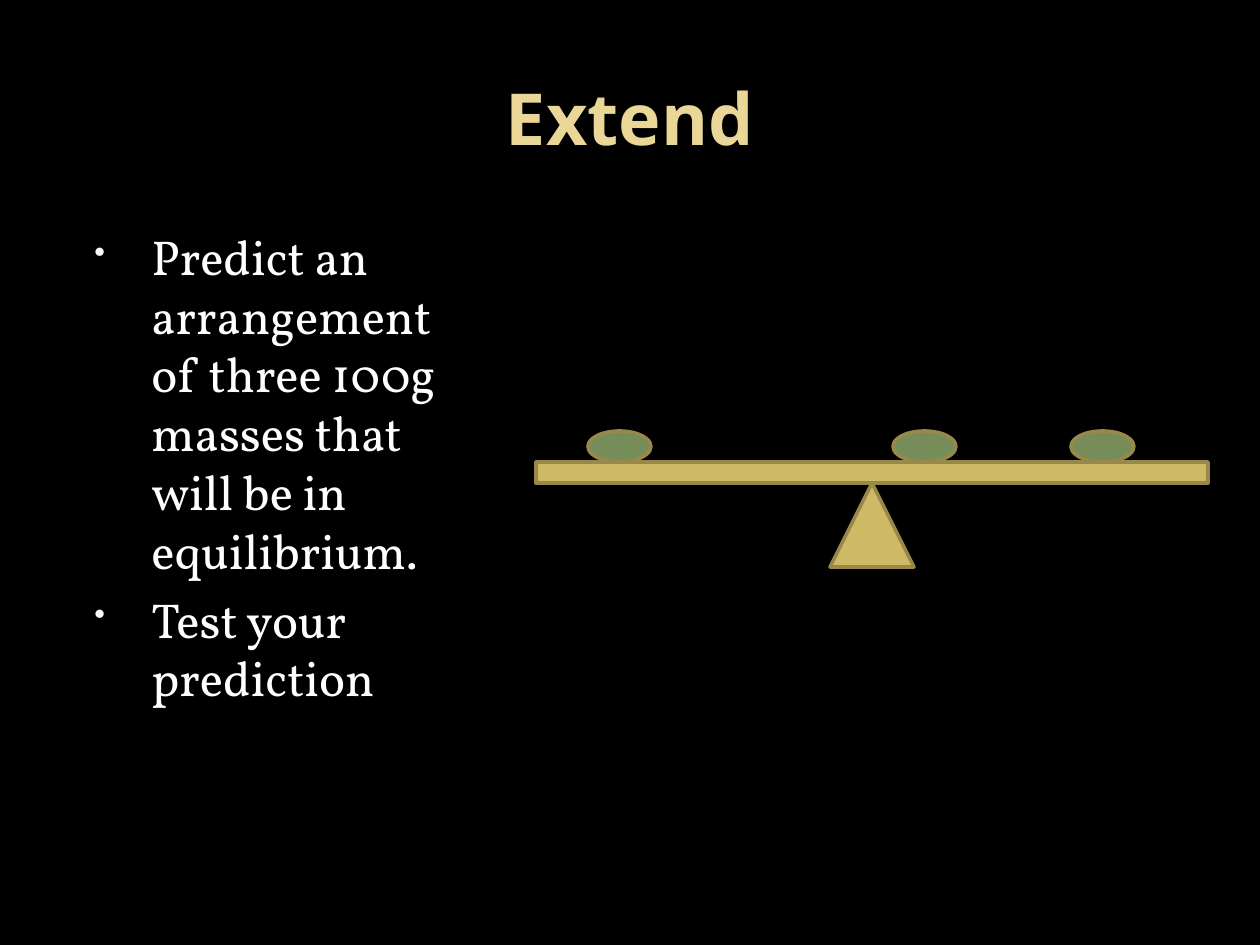
from typing import NamedTuple

from lxml import etree
from pptx import Presentation
from pptx import util as u
from pptx.dml.color import RGBColor
from pptx.enum import shapes, text
from pptx.oxml.ns import qn

EMU_PER_PX = 914400 / 126
COLORS = {
    "background": "000000",
    "title": "EAD696",
    "body": "FFFFFF",
    "bullet": "F9F9F9",
    "wood": "CEB966",
    "mass": "768D5A",
    "outline": "98894B",
}
STEPS = [
    "Predict an arrangement of three 100g masses that will be in equilibrium.",
    "Test your prediction",
]


class Part(NamedTuple):
    kind: shapes.MSO_SHAPE
    left: int
    top: int
    width: int
    height: int
    color: str


FULCRUM = Part(shapes.MSO_SHAPE.ISOSCELES_TRIANGLE, 830, 483, 84, 84, "wood")
BEAM = Part(shapes.MSO_SHAPE.RECTANGLE, 536, 462, 672, 21, "wood")
MASSES = [Part(shapes.MSO_SHAPE.OVAL, left, 431, 63, 31, "mass")
          for left in (588, 893, 1071)]


def px(length: int) -> u.Emu:
    return u.Emu(round(length * EMU_PER_PX))


def rgb(name: str) -> RGBColor:
    return RGBColor.from_string(COLORS[name])


def set_font(paragraph, name: str, size: int, color: str, bold: bool = False) -> None:
    font = paragraph.font
    font.name, font.size, font.bold = name, u.Pt(size), bold
    font.color.rgb = rgb(color)


def add_bullet(paragraph) -> None:
    """Give the paragraph a small hanging bullet."""
    props = paragraph._p.get_or_add_pPr()
    props.set("marL", str(px(76)))
    props.set("indent", str(px(-57)))
    color = etree.SubElement(props, qn("a:buClr"))
    etree.SubElement(color, qn("a:srgbClr"), val=COLORS["bullet"])
    etree.SubElement(props, qn("a:buSzPct"), val="65000")
    etree.SubElement(props, qn("a:buChar"), char="•")


def add_title(slide, wording: str) -> None:
    title = slide.shapes.title
    title.left, title.top, title.width, title.height = map(px, (63, 38, 1134, 158))
    frame = title.text_frame
    frame.text = wording
    frame.auto_size = text.MSO_AUTO_SIZE.NONE
    frame.vertical_anchor = text.MSO_ANCHOR.MIDDLE
    heading = frame.paragraphs[0]
    heading.alignment = text.PP_ALIGN.CENTER
    set_font(heading, "Noto Sans", 41, "title", bold=True)


def add_steps(slide, steps: list[str]) -> None:
    frame = slide.shapes.add_textbox(*map(px, (63, 220, 431, 624))).text_frame
    frame.word_wrap = True
    frame.text = "\n".join(steps)
    for step in frame.paragraphs:
        step.space_before = u.Pt(5.6)
        add_bullet(step)
        set_font(step, "Vollkorn", 28, "body")


def add_part(slide, part: Part) -> None:
    shape = slide.shapes.add_shape(part.kind, *map(px, part[1:5]))
    shape.shadow.inherit = False
    shape.fill.solid()
    shape.fill.fore_color.rgb = rgb(part.color)
    shape.line.color.rgb = rgb("outline")
    shape.line.width = u.Pt(2)


def main() -> None:
    deck = Presentation()
    deck.slide_width, deck.slide_height = px(1260), px(945)
    slide = deck.slides.add_slide(deck.slide_layouts.get_by_name("Title Only"))
    slide.background.fill.solid()
    slide.background.fill.fore_color.rgb = rgb("background")
    add_title(slide, "Extend")
    add_steps(slide, STEPS)
    for part in (FULCRUM, BEAM, *MASSES):
        add_part(slide, part)
    deck.save("out.pptx")


if __name__ == "__main__":
    main()
